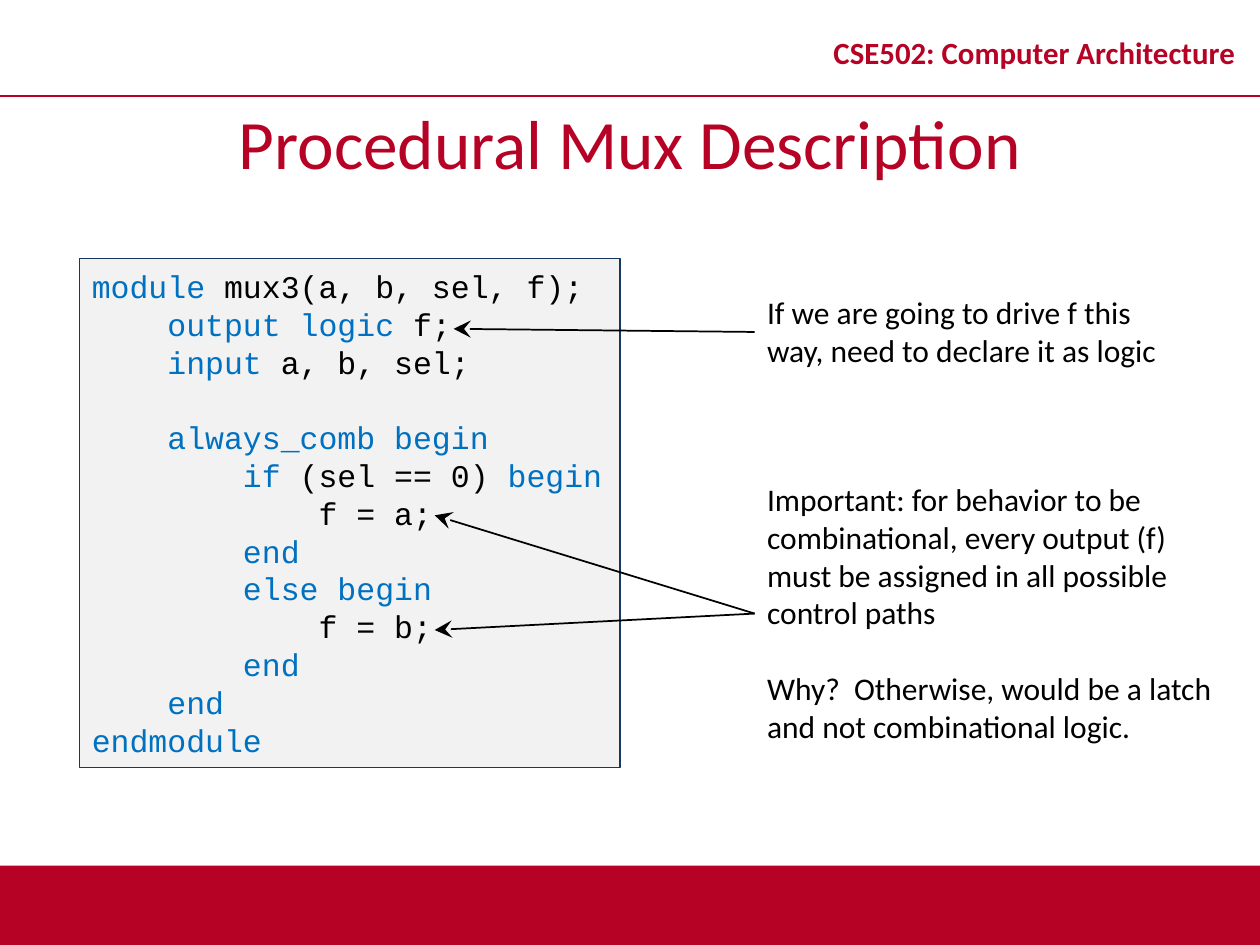
"""Build the slide on procedural multiplexer description in SystemVerilog."""
from lxml.etree import SubElement
from pptx import Presentation
from pptx.dml.color import RGBColor
from pptx.enum.shapes import MSO_CONNECTOR, MSO_SHAPE
from pptx.enum.text import MSO_ANCHOR, PP_ALIGN
from pptx.oxml.ns import qn
from pptx.util import Inches, Pt

RED, BLUE, BLACK = "B60225", "0070C0", "000000"
LINE_HEIGHT = Pt(21.6)

deck = Presentation()
deck.slide_width, deck.slide_height = Inches(10), Inches(7.5)
column, row = deck.slide_width / 100, deck.slide_height / 75
page = deck.slides.add_slide(deck.slide_layouts[5])


def grid(*lengths):
    return [round(length * (row if index % 2 else column)) for index, length in enumerate(lengths)]


def paint(target, colour):
    if hasattr(target, "solid"):
        target.solid()
        target = target.fore_color
    target.rgb = RGBColor.from_string(colour)


footer = page.shapes.add_shape(MSO_SHAPE.RECTANGLE, *grid(0, 68.7, 100, 6.3))
footer.shadow.inherit = False
paint(footer.fill, RED)
footer.line.fill.background()

title = page.shapes.title
title.left, title.top, title.width, title.height = grid(6.9, 7.4, 86.2, 7.7)
course = page.shapes.add_textbox(*grid(64.2, 1.3, 35.8, 6.3))
headings = [
    (title, "Procedural Mux Description", 39.6, False, 1.0),
    (course, "CSE502: Computer Architecture", 17.6, True, 0.8),
]
for box, words, size, bold, spacing in headings:
    box.text_frame.word_wrap = True
    box.text_frame.vertical_anchor = MSO_ANCHOR.MIDDLE
    para = box.text_frame.paragraphs[0]
    para.alignment, para.line_spacing = PP_ALIGN.CENTER, spacing
    span = para.add_run()
    span.text = words
    span.font.name, span.font.size, span.font.bold = "Calibri", Pt(size), bold
    paint(span.font.color, RED)

code = page.shapes.add_shape(MSO_SHAPE.RECTANGLE, *grid(6.3, 20.5, 42.9, 40.4))
code.shadow.inherit = False
paint(code.fill, "F2F2F2")
paint(code.line.fill, "17375E")
code.line.width = Pt(0.75)
declaration_note = page.shapes.add_textbox(*grid(59.9, 22.8, 33.6, 7.1))
control_note = page.shapes.add_textbox(*grid(59.9, 37.6, 37.4, 22.2))

source_lines = [
    "|module| mux3(a, b, sel, f);",
    "    |output logic| f;",
    "    |input| a, b, sel;",
    "    |always_comb begin|",
    "        |if| (sel == 0) |begin|",
    "            f = a;",
    "        |end|",
    "        |else begin|",
    "            f = b;",
    "        |end|",
    "    |end|",
    "|endmodule|",
]
declaration = ["If we are going to drive f this way, need to declare it as logic"]
control = [
    "Important: for behavior to be combinational, every output (f) must be assigned in all possible control paths",
    "Why?  Otherwise, would be a latch and not combinational logic.",
]
passages = [
    (code, source_lines, "Courier New", 3, False, MSO_ANCHOR.MIDDLE),
    (declaration_note, declaration, "Calibri", None, True, MSO_ANCHOR.TOP),
    (control_note, control, "Calibri", 1, True, MSO_ANCHOR.TOP),
]
for box, lines, font, gap_before, wrap, anchor in passages:
    frame = box.text_frame
    frame.word_wrap, frame.vertical_anchor = wrap, anchor
    for number, line in enumerate(lines):
        para = frame.add_paragraph() if number else frame.paragraphs[0]
        para.alignment, para.line_spacing = PP_ALIGN.LEFT, LINE_HEIGHT
        if number == gap_before:
            para.space_before = LINE_HEIGHT
        for index, words in enumerate(line.split("|")):
            if words:
                span = para.add_run()
                span.text = words
                span.font.name, span.font.size = font, Pt(18)
                paint(span.font.color, BLUE if index % 2 else BLACK)

connectors = [
    (None, (0, 7.6, 100, 7.6), RED),
    (control_note, (59.9, 48.7, 34.5, 40.9), BLACK),
    (control_note, (59.9, 48.7, 34.5, 50), BLACK),
    (declaration_note, (59.9, 26.3, 36, 26.1), BLACK),
]
for note, ends, colour in connectors:
    connector = page.shapes.add_connector(MSO_CONNECTOR.STRAIGHT, *grid(*ends))
    paint(connector.line.fill, colour)
    connector.line.width = Pt(1)
    properties = connector._element.spPr
    if note is not None:
        connector.begin_connect(note, 1)
        SubElement(properties.find(qn("a:ln")), qn("a:tailEnd"), type="stealth", w="lg", len="lg")
    SubElement(properties, qn("a:effectLst"))

deck.save("out.pptx")
